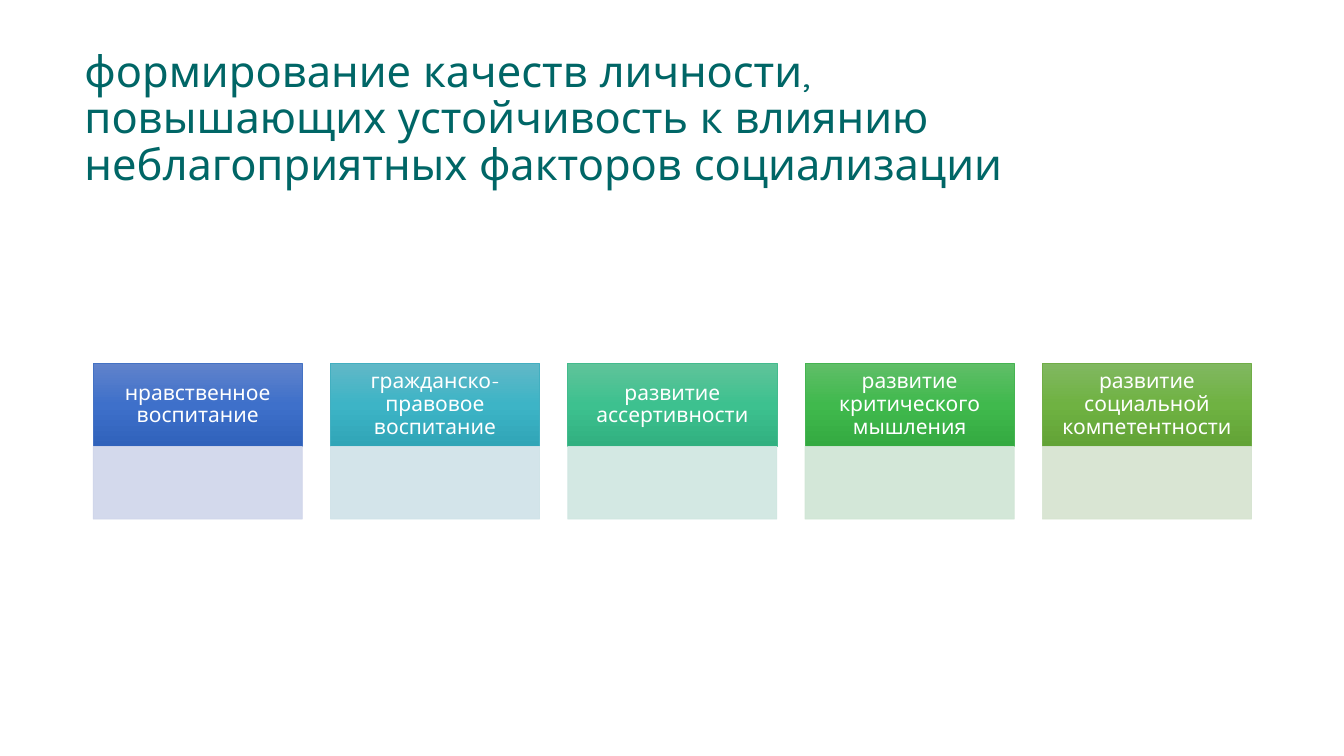
from copy import deepcopy
from dataclasses import dataclass

from lxml.etree import SubElement
from pptx import Presentation
from pptx.dml.color import RGBColor
from pptx.enum.shapes import MSO_SHAPE
from pptx.enum.text import MSO_ANCHOR, PP_ALIGN
from pptx.oxml.ns import qn
from pptx.shapes.autoshape import Shape
from pptx.slide import Slide
from pptx.text.text import TextFrame
from pptx.util import Cm, Pt


@dataclass(frozen=True)
class Theme:
    font: str = "Quicksand"
    title_size: float = 31
    label_size: float = 15
    title_color: str = "006666"
    label_color: str = "FFFFFF"
    outline_width: float = 0.5
    line_spacing: float = 0.9
    panel_opacity: int = 90


@dataclass(frozen=True)
class Quality:
    label: str
    gradient: tuple[str, str, str]
    outline: str
    panel: str


THEME = Theme()

TITLE_LINES = (
    "формирование качеств личности,",
    "повышающих устойчивость к влиянию неблагоприятных факторов социализации",
)

QUALITIES = (
    Quality("нравственное воспитание", ("6183CB", "3E70CA", "3062BB"), "4472C4", "CFD5EA"),
    Quality("гражданско-правовое воспитание", ("61B8C7", "3DB4C6", "30A5B7"), "43AFC0", "CFE2E8"),
    Quality("развитие ассертивности", ("60C39A", "3DC18F", "31B080"), "43BB8D", "CFE6E0"),
    Quality("развитие критического мышления", ("60BE68", "40B94D", "34AA41"), "45B451", "CFE5D4"),
    Quality("развитие социальной компетентности", ("81B861", "6FB242", "62A336"), "70AD47", "D5E3CF"),
)

FIRST_LEFT, PITCH, CARD_WIDTH = 2.35, 5.98, 5.27
HEADER_TOP, HEADER_HEIGHT, PANEL_HEIGHT = 9.15, 2.1, 1.83


def write_text(frame: TextFrame, lines: tuple[str, ...], size: float, color: str,
               align: PP_ALIGN, frame_format: dict) -> None:
    for name, value in frame_format.items():
        setattr(frame, name, value)
    paragraph = frame.paragraphs[0]
    for name, value in {"alignment": align, "line_spacing": THEME.line_spacing}.items():
        setattr(paragraph, name, value)
    for number, line in enumerate(lines):
        if number:
            paragraph.add_line_break()
        run = paragraph.add_run()
        run.text = line
        for name, value in {"name": THEME.font, "size": Pt(size)}.items():
            setattr(run.font, name, value)
        run.font.color.rgb = RGBColor.from_string(color)


def add_block(slide: Slide, left: float, top: float, height: float, outline: str) -> Shape:
    block = slide.shapes.add_shape(
        MSO_SHAPE.RECTANGLE, Cm(left), Cm(top), Cm(CARD_WIDTH), Cm(height))
    block.shadow.inherit = False
    block.line.width = Pt(THEME.outline_width)
    block.line.color.rgb = RGBColor.from_string(outline)
    return block


def fill_gradient(block: Shape, colors: tuple[str, str, str]) -> None:
    block.fill.gradient()
    block.fill.gradient_angle = 270
    first_stop = next(block._element.spPr.iter(qn("a:gs")))
    first_stop.addnext(deepcopy(first_stop))
    for stop, position, color in zip(block.fill.gradient_stops, (0, 0.5, 1), colors):
        stop.position = position
        stop.color.rgb = RGBColor.from_string(color)


def add_header(slide: Slide, left: float, quality: Quality) -> None:
    header = add_block(slide, left, HEADER_TOP, HEADER_HEIGHT, quality.outline)
    fill_gradient(header, quality.gradient)
    write_text(header.text_frame, (quality.label,), THEME.label_size, THEME.label_color,
               PP_ALIGN.CENTER, {
                   "word_wrap": True, "vertical_anchor": MSO_ANCHOR.MIDDLE,
                   "margin_left": Cm(0.3), "margin_right": Cm(0.3),
                   "margin_top": Cm(0.17), "margin_bottom": Cm(0.17)})


def add_panel(slide: Slide, left: float, quality: Quality) -> None:
    panel = add_block(slide, left, HEADER_TOP + HEADER_HEIGHT, PANEL_HEIGHT, quality.panel)
    panel.fill.solid()
    panel.fill.fore_color.rgb = RGBColor.from_string(quality.panel)
    for color in panel._element.spPr.iter(qn("a:srgbClr")):
        SubElement(color, qn("a:alpha"), val=str(THEME.panel_opacity * 1000))


def add_title(slide: Slide) -> None:
    title = slide.shapes.add_textbox(Cm(1.88), Cm(0.97), Cm(29.2), Cm(6.07))
    write_text(title.text_frame, TITLE_LINES, THEME.title_size, THEME.title_color,
               PP_ALIGN.LEFT, {
                   "word_wrap": True, "vertical_anchor": MSO_ANCHOR.TOP,
                   "margin_top": Cm(0.28)})


def main() -> None:
    presentation = Presentation()
    for name, value in {"slide_width": Cm(33.87), "slide_height": Cm(19.05)}.items():
        setattr(presentation, name, value)
    slide = presentation.slides.add_slide(presentation.slide_layouts[6])
    add_title(slide)
    for column, quality in enumerate(QUALITIES):
        left = FIRST_LEFT + column * PITCH
        add_header(slide, left, quality)
        add_panel(slide, left, quality)
    presentation.save("out.pptx")


if __name__ == "__main__":
    main()
